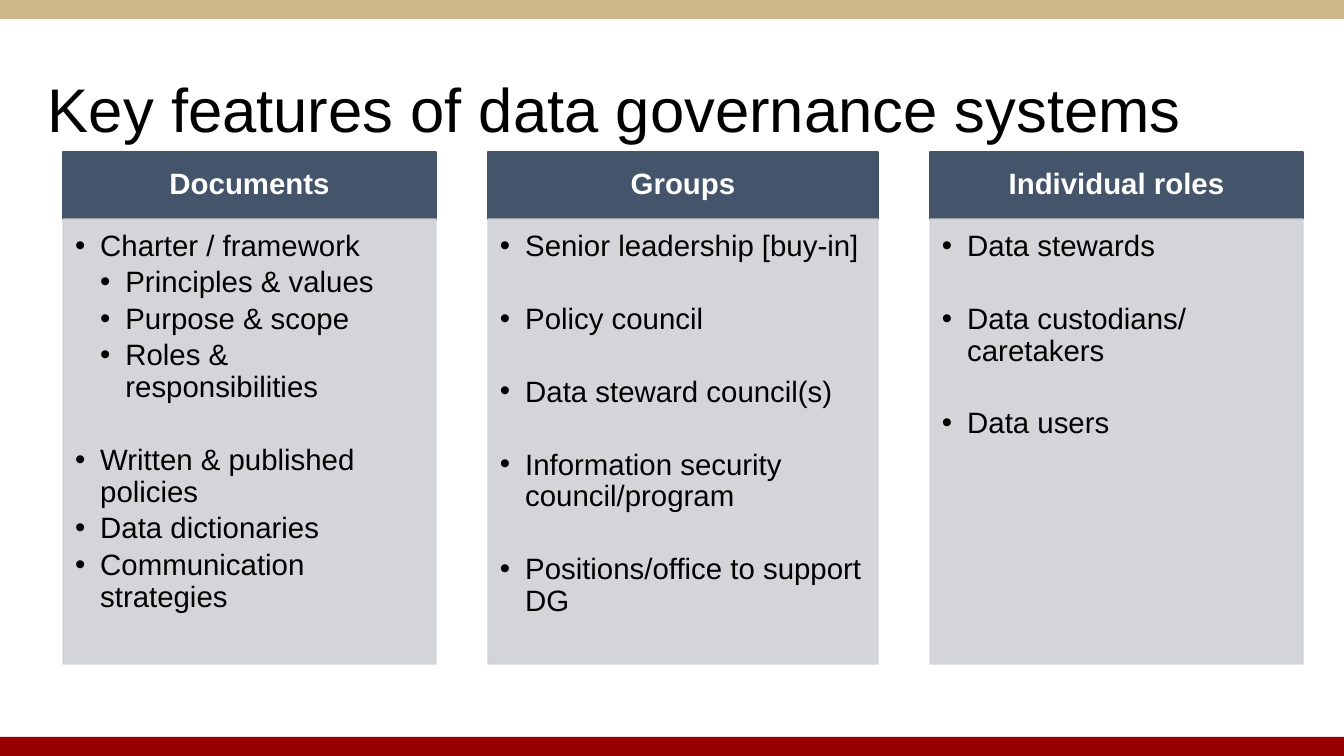
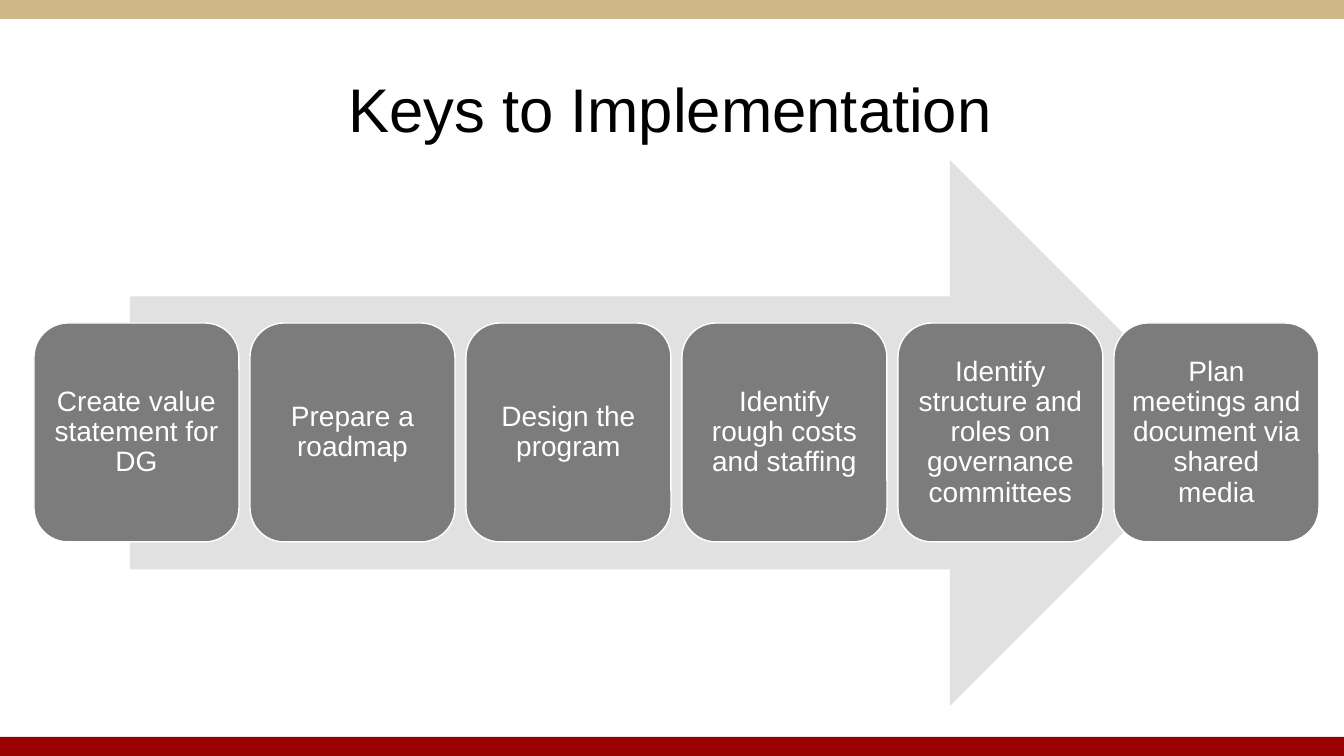
"""Build two slides on data governance."""
from dataclasses import dataclass

from lxml import etree
from pptx import Presentation
from pptx.dml.color import RGBColor
from pptx.enum.shapes import MSO_SHAPE
from pptx.enum.text import MSO_ANCHOR, PP_ALIGN
from pptx.oxml.ns import qn
from pptx.util import Emu, Pt

RECT = MSO_SHAPE.RECTANGLE
ROUND = MSO_SHAPE.ROUNDED_RECTANGLE
ARROW = MSO_SHAPE.RIGHT_ARROW
LEFT, CENTER = PP_ALIGN.LEFT, PP_ALIGN.CENTER
TOP, MIDDLE = MSO_ANCHOR.TOP, MSO_ANCHOR.MIDDLE
WIDE, HIGH = 1344, 756
SCALE = 12192000 / WIDE


@dataclass(frozen=True)
class Theme:
    """Hold the colours and type sizes of the deck."""
    font: str = "Arial"
    ink: str = "000000"
    white: str = "FFFFFF"
    gold: str = "CEB888"
    red: str = "990000"
    slate: str = "44546A"
    pale: str = "CFD1D4"
    arrow: str = "E1E1E1"
    card: str = "7C7C7C"
    title: int = 44
    list: int = 21
    step: int = 20
    after: float = 3.4
    gap: int = 26


THEME = Theme()

COLUMNS = [
    ("Documents", 373, [
        ("Charter / framework", 0, False),
        ("Principles & values", 1, False),
        ("Purpose & scope", 1, False),
        ("Roles & responsibilities", 1, False),
        ("Written & published policies", 0, True),
        ("Data dictionaries", 0, False),
        ("Communication strategies", 0, False),
    ]),
    ("Groups", 390, [
        ("Senior leadership [buy-in]", 0, False),
        ("Policy council", 0, True),
        ("Data steward council(s)", 0, True),
        ("Information security council/program", 0, True),
        ("Positions/office to support DG", 0, True),
    ]),
    ("Individual roles", 373, [
        ("Data stewards", 0, False),
        ("Data custodians/ caretakers", 0, True),
        ("Data users", 0, True),
    ]),
]

STEPS = [
    "Create value statement for DG",
    "Prepare a roadmap",
    "Design the program",
    "Identify rough costs and staffing",
    "Identify structure and roles on governance committees",
    "Plan meetings and document via shared media",
]


def px(size):
    """Turn px into EMU."""
    return Emu(round(size * SCALE))


def fade(fill, alpha):
    """Make a solid fill partly clear."""
    for tone in fill.iter(qn("a:srgbClr")):
        etree.SubElement(tone, qn("a:alpha"), val=str(alpha * 1000))


def shape(slide, kind, box, fill, line=None, alpha=None):
    """Draw a preset shape in a box of px."""
    item = slide.shapes.add_shape(kind, *map(px, box))
    item.shadow.inherit = False
    item.fill.solid()
    item.fill.fore_color.rgb = RGBColor.from_string(fill)
    if line:
        item.line.color.rgb = RGBColor.from_string(line)
        item.line.width = Pt(1)
    else:
        item.line.fill.background()
    if alpha:
        fade(item._element.spPr, alpha)
    return item


def bullet(para, level):
    """Give a paragraph a hanging bullet."""
    para.level = level + 1
    props = para._p.get_or_add_pPr()
    props.set("marL", str(228600 * (level + 1)))
    props.set("indent", "-228600")
    etree.SubElement(props, qn("a:buFont"), typeface=THEME.font)
    etree.SubElement(props, qn("a:buChar"), char="•")


def write(item, rows, size, color=THEME.ink, bold=False, align=LEFT,
          anchor=MIDDLE, pad=(10, 5, 10, 5), dots=False, after=0):
    """Write rows of (text, level, gap) into a shape."""
    frame = item.text_frame
    frame.word_wrap = True
    frame.vertical_anchor = anchor
    (frame.margin_left, frame.margin_top,
     frame.margin_right, frame.margin_bottom) = map(px, pad)
    for spot, (text, level, gap) in enumerate(rows):
        para = frame.add_paragraph() if spot else frame.paragraphs[0]
        if dots:
            bullet(para, level)
        para.alignment = align
        para.line_spacing = 0.9
        para.space_before = Pt(THEME.gap if gap else 0)
        para.space_after = Pt(after)
        run = para.add_run()
        run.text = text
        run.font.name = THEME.font
        run.font.size = Pt(size)
        run.font.bold = bold
        run.font.color.rgb = RGBColor.from_string(color)


def base(deck, title, align=LEFT):
    """Add a slide with its bands and title."""
    slide = deck.slides.add_slide(deck.slide_layouts[6])
    band = 19
    shape(slide, RECT, (0, HIGH - band, WIDE, band), THEME.red)
    shape(slide, RECT, (0, 0, WIDE, band), THEME.gold)
    head = slide.shapes.add_textbox(*map(px, (38, 40, 1265, 146)))
    write(head, [(title, 0, False)], THEME.title, align=align)
    return slide


def column(slide, box, name, rows):
    """Place a headed list in a box."""
    left, top, width, height = box
    bar = 67
    head = shape(slide, RECT, (left, top, width, bar), THEME.slate, THEME.slate)
    write(head, [(name, 0, False)], THEME.list, color=THEME.white, bold=True,
          align=CENTER, pad=(16, 9, 16, 9))
    body = shape(slide, RECT, (left, top + bar, width, height - bar),
                 THEME.pale, THEME.pale, alpha=90)
    write(body, rows, THEME.list, anchor=TOP, pad=(12, 12, 16, 18),
          dots=True, after=THEME.after)


def columns(slide, box):
    """Place the columns side by side in a box."""
    left, top, width, height = box
    gap = (width - sum(size for _, size, _ in COLUMNS)) // (len(COLUMNS) - 1)
    for name, size, rows in COLUMNS:
        column(slide, (left, top, size, height), name, rows)
        left += size + gap


def process(slide, box):
    """Place an arrow with a row of steps in a box."""
    left, top, width, height = box
    inset, gap, tall = 96, 11, 219
    shape(slide, ARROW, (left + inset, top, width - 2 * inset, height),
          THEME.arrow)
    size = (width - gap * (len(STEPS) - 1)) // len(STEPS)
    row = top + (height - tall) // 2
    for spot, text in enumerate(STEPS):
        card = shape(slide, ROUND, (left + spot * (size + gap), row, size, tall),
                     THEME.card, THEME.white)
        write(card, [(text, 0, False)], THEME.step, color=THEME.white,
              align=CENTER, pad=(8, 8, 8, 8))


def main():
    """Build and save the deck."""
    deck = Presentation()
    deck.slide_width, deck.slide_height = px(WIDE), px(HIGH)
    columns(base(deck, "Key features of data governance systems"),
            (63, 152, 1240, 512))
    process(base(deck, "Keys to Implementation", CENTER),
            (34, 160, 1285, 546))
    deck.save("out.pptx")


if __name__ == "__main__":
    main()
